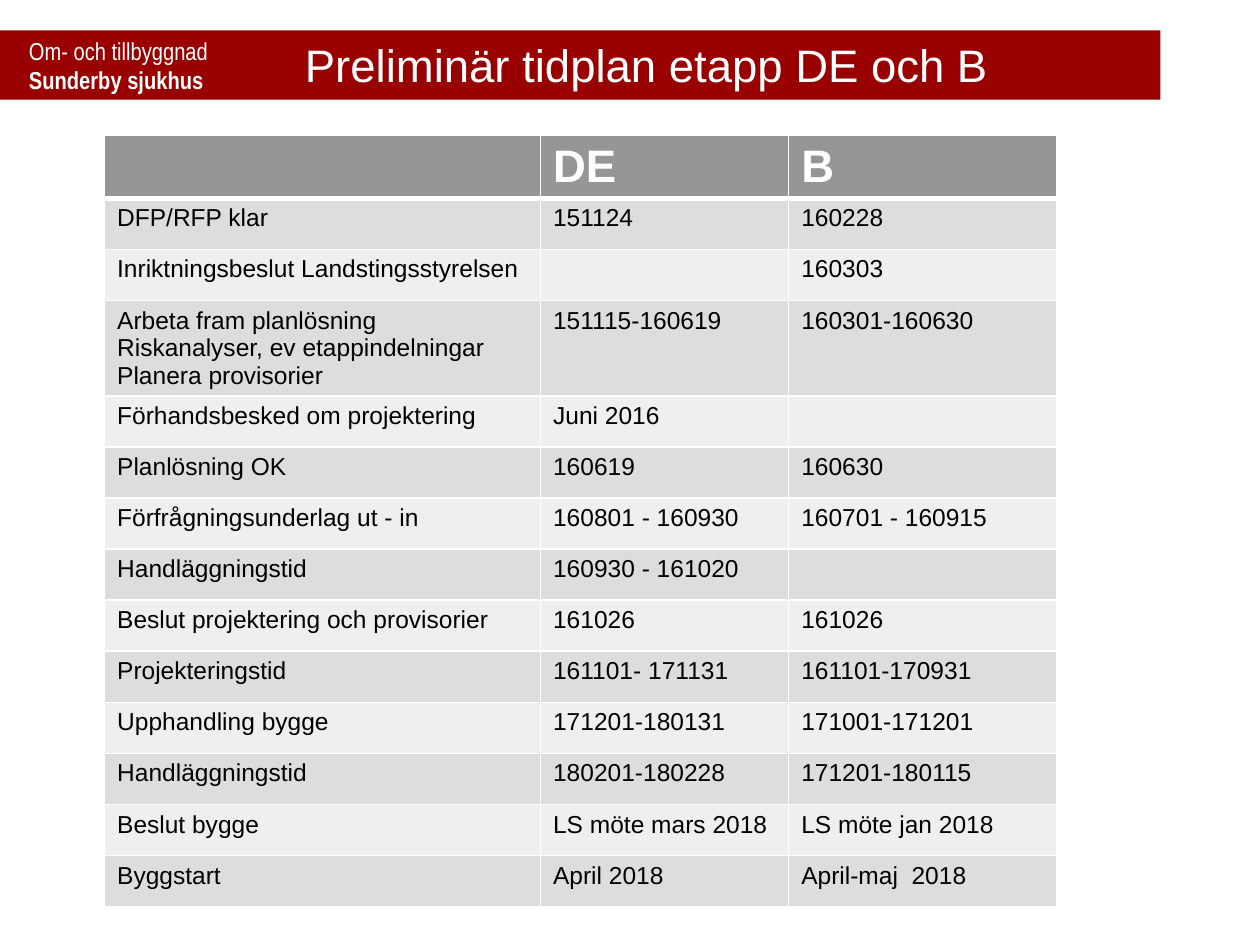
from dataclasses import dataclass

from lxml import etree
from pptx import Presentation
from pptx import util as u
from pptx.dml.color import RGBColor
from pptx.enum import shapes, text
from pptx.oxml.ns import qn


@dataclass(frozen=True)
class Theme:
    banner: str = "990000"
    header: str = "969696"
    bands: tuple = ("DDDDDD", "EFEFEF")
    light: str = "FFFFFF"
    dark: str = "000000"
    font: str = "Arial"
    narrow: str = "Arial Narrow"
    large: int = 26
    small: int = 14
    rule: int = 1
    header_rule: int = 3


THEME = Theme()

COLUMNS = (3.46, 1.97, 2.13)
HEADER = ("", "DE", "B")
SCHEDULE = (
    ("DFP/RFP klar", "151124", "160228"),
    ("Inriktningsbeslut Landstingsstyrelsen", "", "160303"),
    ("Arbeta fram planlösning\nRiskanalyser, ev etappindelningar\nPlanera provisorier",
     "151115-160619", "160301-160630"),
    ("Förhandsbesked om projektering", "Juni 2016", ""),
    ("Planlösning OK", "160619", "160630"),
    ("Förfrågningsunderlag ut - in", "160801 - 160930", "160701 - 160915"),
    ("Handläggningstid", "160930 - 161020", ""),
    ("Beslut projektering och provisorier", "161026", "161026"),
    ("Projekteringstid", "161101- 171131", "161101-170931"),
    ("Upphandling bygge", "171201-180131", "171001-171201"),
    ("Handläggningstid", "180201-180228", "171201-180115"),
    ("Beslut bygge", "LS möte mars 2018", "LS möte jan 2018"),
    ("Byggstart", "April 2018", "April-maj  2018"),
)


def inches(box):
    return [u.Inches(v) for v in box]


def add_run(p, words, size, color, font=THEME.font, bold=False):
    r = p.add_run()
    r.text = words
    r.font.name = font
    r.font.size = u.Pt(size)
    r.font.bold = bold
    r.font.color.rgb = RGBColor.from_string(color)


def set_borders(cell, top, bottom):
    tc_pr = cell._tc.get_or_add_tcPr()
    widths = {"lnL": THEME.rule, "lnR": THEME.rule, "lnT": top, "lnB": bottom}
    for side, width in widths.items():
        ln = etree.SubElement(tc_pr, qn(f"a:{side}"), w=str(u.Pt(width)))
        fill = etree.SubElement(ln, qn("a:solidFill"))
        etree.SubElement(fill, qn("a:srgbClr"), val=THEME.light)


def add_banner(s, box):
    sp = s.shapes.add_shape(shapes.MSO_SHAPE.RECTANGLE, *inches(box))
    sp.shadow.inherit = False
    sp.fill.solid()
    sp.fill.fore_color.rgb = RGBColor.from_string(THEME.banner)
    sp.line.fill.background()
    tf = sp.text_frame
    tf.word_wrap = True
    tf.vertical_anchor = text.MSO_ANCHOR.MIDDLE
    tf.margin_left = u.Inches(0.23)
    p = tf.paragraphs[0]
    p.alignment = text.PP_ALIGN.LEFT
    add_run(p, "Om- och tillbyggnad", THEME.small, THEME.light, THEME.narrow)
    p.add_line_break()
    add_run(p, "Sunderby sjukhus", THEME.small, THEME.light, THEME.narrow, True)


def add_title(s, box):
    title = s.shapes.title
    title.left, title.top, title.width, title.height = inches(box)
    tf = title.text_frame
    tf.word_wrap = True
    tf.auto_size = text.MSO_AUTO_SIZE.NONE
    tf.vertical_anchor = text.MSO_ANCHOR.TOP
    p = tf.paragraphs[0]
    p.alignment = text.PP_ALIGN.LEFT
    add_run(p, "Preliminär tidplan etapp DE och B", THEME.large, THEME.light)
    # Bring the title in front of the banner
    s.shapes._spTree.append(title._element)


def add_schedule(s, box):
    rows = (HEADER,) + SCHEDULE
    table = s.shapes.add_table(len(rows), len(COLUMNS), *inches(box)).table
    for column, width in zip(table.columns, COLUMNS):
        column.width = u.Inches(width)
    for i, row in enumerate(rows):
        head = i == 0
        fill = THEME.header if head else THEME.bands[(i - 1) % 2]
        size = THEME.large if head else THEME.small
        color = THEME.light if head else THEME.dark
        for j, words in enumerate(row):
            cell = table.cell(i, j)
            set_borders(cell,
                        top=THEME.header_rule if i == 1 else THEME.rule,
                        bottom=THEME.header_rule if head else THEME.rule)
            cell.fill.solid()
            cell.fill.fore_color.rgb = RGBColor.from_string(fill)
            tf = cell.text_frame
            for k, line in enumerate(words.split("\n") if words else ()):
                p = tf.add_paragraph() if k else tf.paragraphs[0]
                add_run(p, line, size, color, bold=head)


def main():
    prs = Presentation()
    prs.slide_width, prs.slide_height = u.Inches(10), u.Inches(7.5)
    s = prs.slides.add_slide(prs.slide_layouts[5])
    add_banner(s, (0, 0.24, 9.21, 0.55))
    add_title(s, (2.32, 0.24, 6.3, 0.54))
    # Rows share this height; taller text makes its own row grow
    add_schedule(s, (0.83, 1.07, sum(COLUMNS), 5.68))
    prs.save("out.pptx")


if __name__ == "__main__":
    main()
